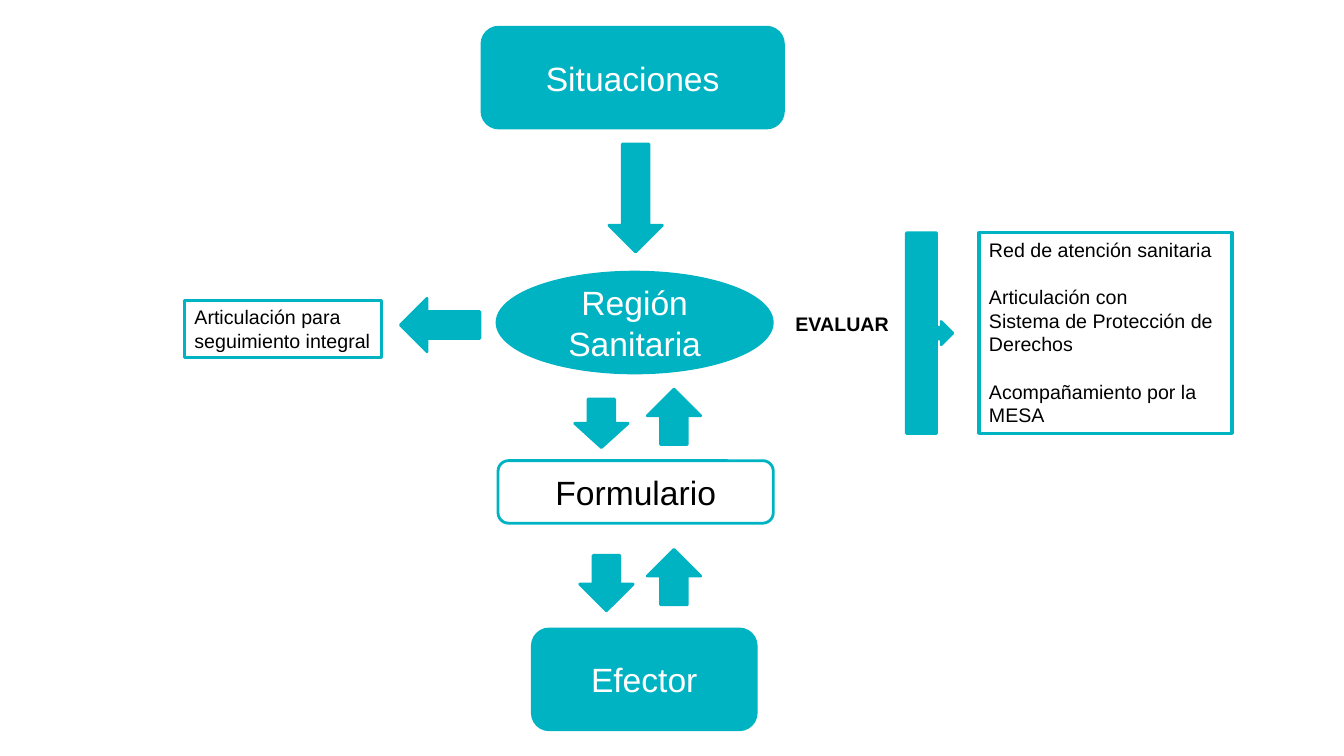
from dataclasses import dataclass

from pptx import Presentation
from pptx import util as u
from pptx.dml.color import RGBColor
from pptx.enum import shapes, text

PX = 9144  # EMU per px, 100 px to the inch
SLIDE_SIZE = (1333, 750)


@dataclass(frozen=True)
class Theme:
    font: str = "Arial"
    teal: RGBColor = RGBColor(0x00, 0xB3, 0xC2)
    white: RGBColor = RGBColor(0xFF, 0xFF, 0xFF)
    black: RGBColor = RGBColor(0x00, 0x00, 0x00)
    step_size: int = 24
    note_size: int = 14
    paragraph_gap: int = 17
    shape_line: float = 2
    note_line: float = 2.25


THEME = Theme()
KIND = shapes.MSO_SHAPE

# Text, shape, (left, top, width, height), fill, text colour
STEPS = [
    ("Situaciones", KIND.ROUNDED_RECTANGLE, (478, 27, 299, 100), THEME.teal, THEME.white),
    ("Región Sanitaria", KIND.OVAL, (493, 270, 273, 100), THEME.teal, THEME.white),
    ("Formulario", KIND.ROUNDED_RECTANGLE, (494, 457, 273, 62), THEME.white, THEME.black),
    ("Efector", KIND.ROUNDED_RECTANGLE, (528, 624, 222, 100), THEME.teal, THEME.white),
]

ARROWS = [
    (KIND.DOWN_ARROW, (604, 143, 53, 107)),
    (KIND.DOWN_ARROW, (570, 396, 53, 48)),
    (KIND.UP_ARROW, (642, 386, 53, 55)),
    (KIND.DOWN_ARROW, (575, 551, 53, 55)),
    (KIND.UP_ARROW, (642, 545, 53, 55)),
    (KIND.LEFT_ARROW, (397, 296, 79, 53)),
]
CALLOUT = (KIND.RIGHT_ARROW_CALLOUT, (899, 231, 46, 199))
CALLOUT_ADJUSTMENTS = (0.25, 0.25, 0.25, 0.65)

# Groups of lines; a gap parts one group from the next
FOLLOW_UP = [["Articulación para", "seguimiento integral"]]
EVALUATE = [["EVALUAR"]]
NETWORK = [
    ["Red de atención sanitaria"],
    ["Articulación con", "Sistema de Protección de Derechos"],
    ["Acompañamiento por la MESA"],
]
# Groups, (left, top, width, height), framed, bold
NOTES = [
    (FOLLOW_UP, (183, 298, 195, 57), True, False),
    (EVALUATE, (779, 305, 115, 34), False, True),
    (NETWORK, (971, 231, 251, 199), True, False),
]


def to_emu(box):
    return [length * PX for length in box]


def format_runs(paragraph, size, color, bold=False):
    for run in paragraph.runs:
        run.font.name = THEME.font
        run.font.size = u.Pt(size)
        run.font.color.rgb = color
        run.font.bold = bold


def add_filled_shape(slide, kind, box, fill=THEME.teal):
    shape = slide.shapes.add_shape(kind, *to_emu(box))
    shape.shadow.inherit = False
    shape.fill.solid()
    shape.fill.fore_color.rgb = fill
    shape.line.color.rgb = THEME.teal
    shape.line.width = u.Pt(THEME.shape_line)
    return shape


def add_step(slide, label, kind, box, fill, color):
    frame = add_filled_shape(slide, kind, box, fill).text_frame
    frame.text = label
    frame.word_wrap = True
    frame.vertical_anchor = text.MSO_ANCHOR.MIDDLE
    paragraph = frame.paragraphs[0]
    paragraph.alignment = text.PP_ALIGN.CENTER
    format_runs(paragraph, THEME.step_size, color)


def add_note(slide, groups, box, framed, bold):
    shape = slide.shapes.add_textbox(*to_emu(box))
    if framed:
        shape.line.color.rgb = THEME.teal
        shape.line.width = u.Pt(THEME.note_line)
    frame = shape.text_frame
    frame.word_wrap = True
    frame.auto_size = text.MSO_AUTO_SIZE.SHAPE_TO_FIT_TEXT
    frame.text = "\n".join(line for group in groups for line in group)
    group_starts = {group[0] for group in groups[1:]}
    for paragraph in frame.paragraphs:
        if paragraph.text in group_starts:
            paragraph.space_before = u.Pt(THEME.paragraph_gap)
        format_runs(paragraph, THEME.note_size, THEME.black, bold)


def main():
    presentation = Presentation()
    presentation.slide_width, presentation.slide_height = to_emu(SLIDE_SIZE)
    slide = presentation.slides.add_slide(presentation.slide_layouts[6])
    for step in STEPS:
        add_step(slide, *step)
    for arrow in ARROWS:
        add_filled_shape(slide, *arrow)
    callout = add_filled_shape(slide, *CALLOUT)
    for index, value in enumerate(CALLOUT_ADJUSTMENTS):
        callout.adjustments[index] = value
    for note in NOTES:
        add_note(slide, *note)
    presentation.save("out.pptx")


if __name__ == "__main__":
    main()
